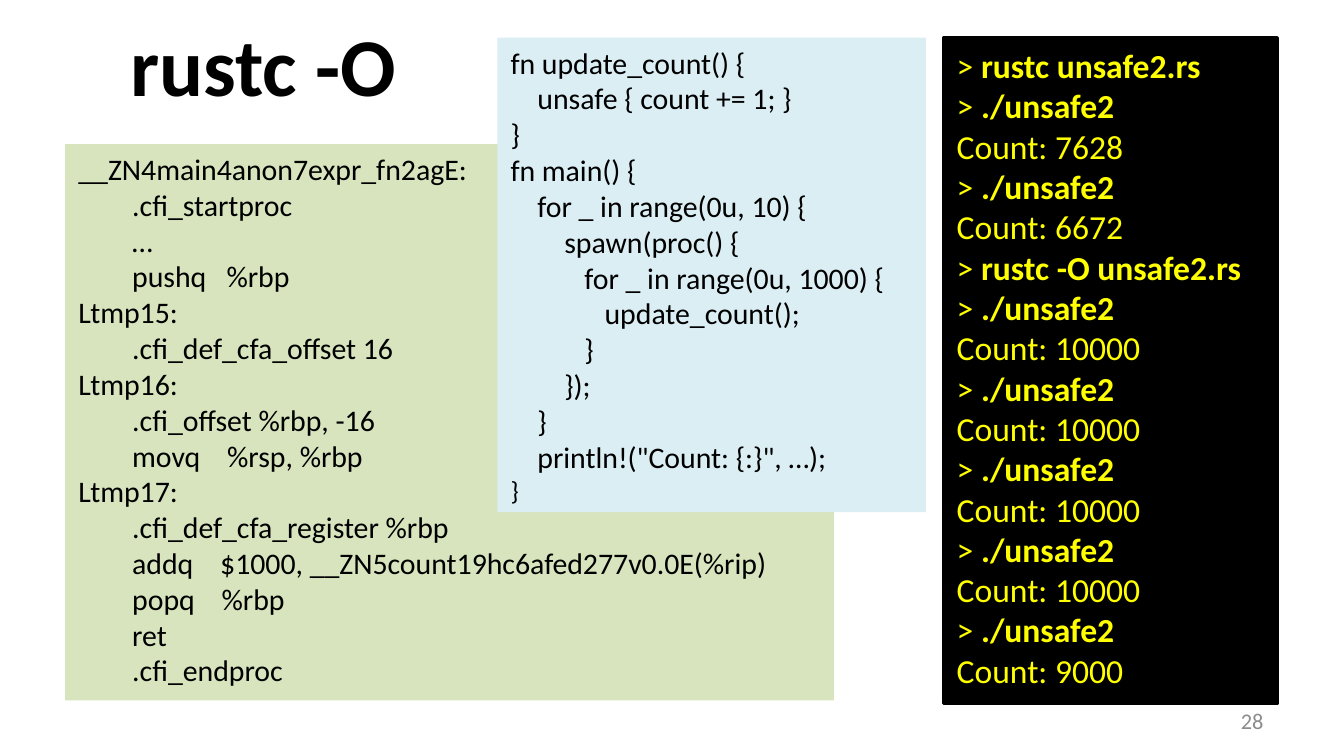
import pptx
import pptx.util
import pptx.dml.color
import pptx.enum.shapes
import pptx.enum.text

ANCHOR = pptx.enum.text.MSO_ANCHOR
ALIGN = pptx.enum.text.PP_ALIGN
FIT = pptx.enum.text.MSO_AUTO_SIZE

deck = pptx.Presentation()
deck.slide_width = pptx.util.Inches(10)
deck.slide_height = deck.slide_width * 9 // 16
column = deck.slide_width / 100
row = deck.slide_height / 100
slide = deck.slides.add_slide(deck.slide_layouts[6])


def paint(target, color):
    if hasattr(target, "solid"):
        target.solid()
        target = target.fore_color
    else:
        target = target.color
    target.rgb = pptx.dml.color.RGBColor.from_string(color)


def write(frame, lines, size, color, align=ALIGN.LEFT, bold=False, **frame_format):
    for name, value in {"word_wrap": True, **frame_format}.items():
        setattr(frame, name, value)
    for number, line in enumerate(lines):
        paragraph = frame.paragraphs[0] if number == 0 else frame.add_paragraph()
        paragraph.alignment = align
        prompt, mark, command = line.partition("> ")
        pieces = [(mark, False), (command, True)] if mark else [(line, bold)]
        for words, strong in pieces:
            run = paragraph.add_run()
            run.text = words
            font = {"name": "Calibri", "size": pptx.util.Pt(size), "bold": strong}
            for name, value in font.items():
                setattr(run.font, name, value)
            paint(run.font, color)


terminal = """> rustc unsafe2.rs
> ./unsafe2
Count: 7628
> ./unsafe2
Count: 6672
> rustc -O unsafe2.rs
> ./unsafe2
Count: 10000
> ./unsafe2
Count: 10000
> ./unsafe2
Count: 10000
> ./unsafe2
Count: 10000
> ./unsafe2
Count: 9000"""

assembly = """__ZN4main4anon7expr_fn2agE:
        .cfi_startproc
        …
        pushq   %rbp
Ltmp15:
        .cfi_def_cfa_offset 16
Ltmp16:
        .cfi_offset %rbp, -16
        movq    %rsp, %rbp
Ltmp17:
        .cfi_def_cfa_register %rbp
        addq    $1000, __ZN5count19hc6afed277v0.0E(%rip)
        popq    %rbp
        ret
        .cfi_endproc"""

rust_source = """fn update_count() {
    unsafe { count += 1; }
}
fn main() {
    for _ in range(0u, 10) {
        spawn(proc() {
           for _ in range(0u, 1000) {
              update_count();
           }
        });
    }
    println!("Count: {:}", …);
}"""

labels = [
    ("rustc -O", (4.8, 0, 29.6, 16.71), 44, "000000", ALIGN.CENTER, True),
    ("28", (71.7, 92.62, 23.3, 5.33), 12, "8C8C8C", ALIGN.RIGHT, False),
]
for words, (left, top, width, height), size, color, align, bold in labels:
    label = slide.shapes.add_textbox(
        int(left * column), int(top * row), int(width * column), int(height * row))
    write(label.text_frame, [words], size, color, align, bold,
          vertical_anchor=ANCHOR.MIDDLE)

panels = [
    (terminal, (70.2, 5.07, 24.8, 88), 18, "FFFF00", "000000", "000000"),
    (assembly, (4.85, 19.06, 57.2, 73.6), 16, "000000", "D7E4BD", None),
    (rust_source, (37, 4.98, 31.9, 62.76), 16, "000000", "DBEEF4", None),
]
for listing, (left, top, width, height), size, color, back, border in panels:
    panel = slide.shapes.add_shape(
        pptx.enum.shapes.MSO_SHAPE.RECTANGLE,
        int(left * column), int(top * row), int(width * column), int(height * row))
    panel.shadow.inherit = False
    paint(panel.fill, back)
    if border:
        paint(panel.line, border)
        panel.line.width = pptx.util.Pt(2)
    else:
        panel.line.fill.background()
    write(panel.text_frame, listing.split("\n"), size, color,
          vertical_anchor=ANCHOR.TOP, auto_size=FIT.SHAPE_TO_FIT_TEXT)

closing_brace = panel.text_frame.paragraphs[-1].runs[0]
closing_brace.font.size = pptx.util.Pt(14)

deck.save("out.pptx")
